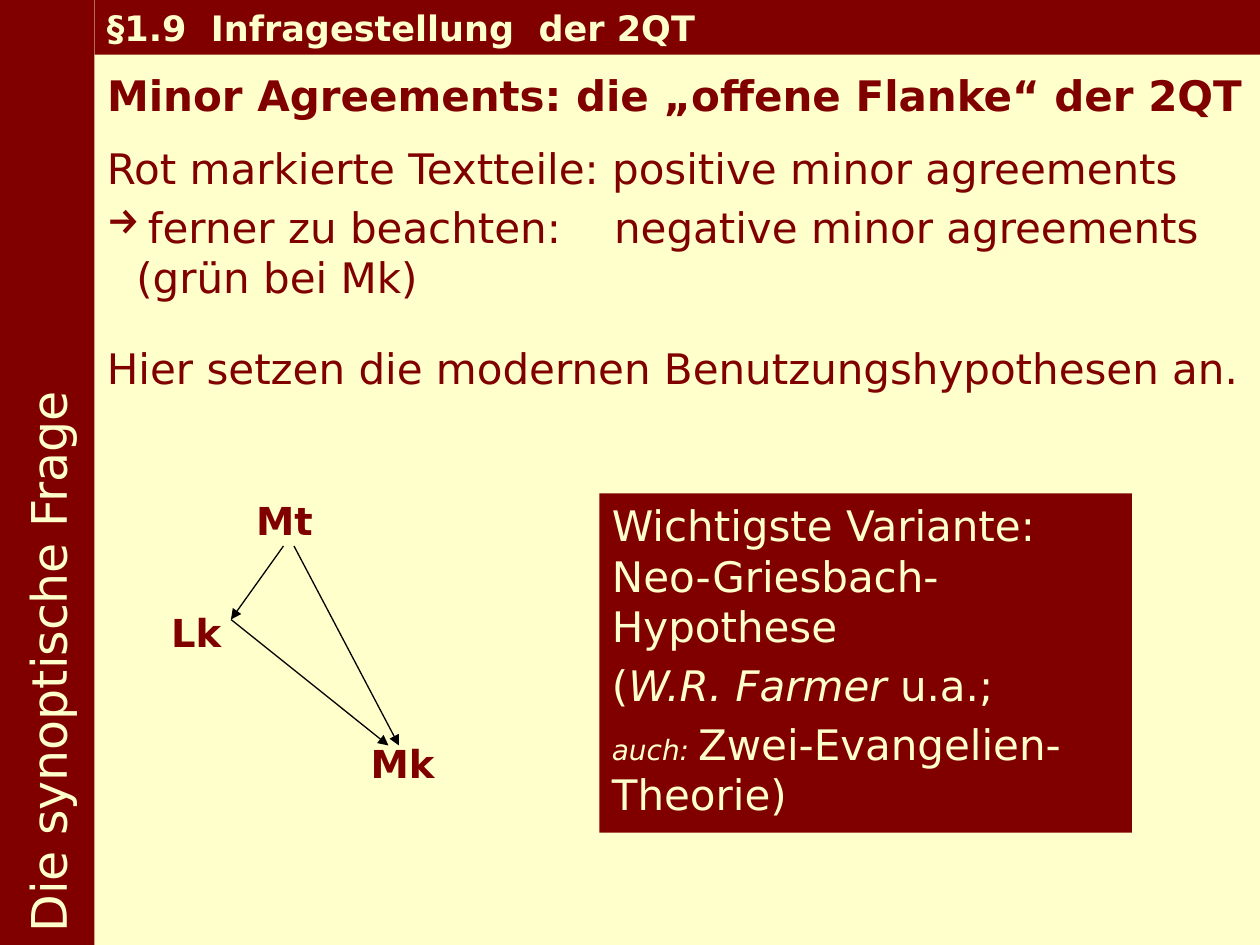
import pptx
import pptx.util
import pptx.dml.color
import pptx.enum.shapes
import pptx.enum.text
import pptx.oxml
import pptx.oxml.ns

MAROON, CREAM, BLACK = "800000", "FFFFCC", "000000"
FONT = "DejaVu Sans"
SPACE = pptx.util.Pt(4.8)

deck = pptx.Presentation()
deck.slide_width, deck.slide_height = pptx.util.Inches(10), pptx.util.Inches(7.5)
CELL = deck.slide_width / 120
page = deck.slides.add_slide(deck.slide_layouts[5])


def color(code):
    return pptx.dml.color.RGBColor.from_string(code)


def write(box, area, lines, size, ink, bold=False, fill=None, anchor="TOP"):
    box.left, box.top, box.width, box.height = [round(part * CELL) for part in area]
    if fill:
        box.shadow.inherit = False
        box.fill.solid()
        box.fill.fore_color.rgb = color(fill)
        box.line.fill.background()
    frame = box.text_frame
    frame.text = "\n".join(lines)
    frame.word_wrap = True
    frame.auto_size = pptx.enum.text.MSO_AUTO_SIZE.NONE
    frame.vertical_anchor = pptx.enum.text.MSO_ANCHOR[anchor]
    for para in frame.paragraphs:
        para.alignment = pptx.enum.text.PP_ALIGN.LEFT
        para.space_before = SPACE
        for span in para.runs:
            span.font.name, span.font.size, span.font.bold = FONT, pptx.util.Pt(size), bold
            span.font.color.rgb = color(ink)
    return frame


page.background.fill.solid()
page.background.fill.fore_color.rgb = color(CREAM)
shapes = page.shapes
RECTANGLE = pptx.enum.shapes.MSO_SHAPE.RECTANGLE

write(shapes.title, (9, 6, 111, 6), ["Minor Agreements: die „offene Flanke“ der 2QT"], 24, MAROON, bold=True)

body = write(shapes.add_textbox(0, 0, 0, 0), (9, 13, 111, 25), [
    "Rot markierte Textteile: positive minor agreements",
    "ferner zu beachten:\tnegative minor agreements",
    "(grün bei Mk)",
    "Hier setzen die modernen Benutzungshypothesen an.",
], 24, MAROON)
bulleted, indented, closing = body.paragraphs[1:]
indented.space_before = pptx.util.Pt(0)
closing.space_before = pptx.util.Pt(23)
namespace = pptx.oxml.ns.nsdecls("a")
arrow_props = bulleted._p.get_or_add_pPr()
arrow_props.set("marL", str(round(3.9 * CELL)))
arrow_props.set("indent", str(round(-3.9 * CELL)))
arrow_props.append(pptx.oxml.parse_xml(f'<a:buChar {namespace} char="→"/>'))
arrow_props.append(pptx.oxml.parse_xml(
    f'<a:tabLst {namespace}><a:tab pos="{round(48.3 * CELL)}" algn="l"/></a:tabLst>'))
indented._p.get_or_add_pPr().set("marL", str(round(2.8 * CELL)))

variant = write(shapes.add_shape(RECTANGLE, 0, 0, 0, 0), (57.1, 47, 50.7, 32.3), [
    "Wichtigste Variante: Neo-Griesbach-Hypothese", "(", "",
], 24, CREAM, fill=MAROON)
for para, text, size, italic in (
    (variant.paragraphs[1], "W.R. Farmer", 24, True),
    (variant.paragraphs[1], " u.a.;", 24, False),
    (variant.paragraphs[2], "auch: ", 16, True),
    (variant.paragraphs[2], "Zwei-Evangelien-Theorie)", 24, False),
):
    span = para.add_run()
    span.text = text
    span.font.name, span.font.size, span.font.italic = FONT, pptx.util.Pt(size), italic
    span.font.color.rgb = color(CREAM)

for gospel, left, middle in (("Mt", 24.4, 49.5), ("Lk", 16.3, 60.2), ("Mk", 35.3, 72.7)):
    frame = write(shapes.add_textbox(0, 0, 0, 0), (left, middle - 2.5, 8, 5), [gospel], 22, MAROON,
                  bold=True, anchor="MIDDLE")
    frame.margin_left = frame.margin_right = frame.margin_top = frame.margin_bottom = 0
    frame.paragraphs[0].space_before = pptx.util.Pt(0)

for ends in ((27, 52, 22, 59), (22, 59, 37, 71), (28, 52, 38, 71)):
    arrow = shapes.add_connector(pptx.enum.shapes.MSO_CONNECTOR.STRAIGHT, *[round(end * CELL) for end in ends])
    arrow.line.color.rgb = color(BLACK)
    arrow.line.width = pptx.util.Pt(0.75)
    arrow.line._get_or_add_ln().append(pptx.oxml.parse_xml(f'<a:tailEnd {namespace} type="triangle"/>'))
    arrow._element.spPr.append(pptx.oxml.parse_xml(f"<a:effectLst {namespace}/>"))

sidebar = write(shapes.add_shape(RECTANGLE, 0, 0, 0, 0), (0, 0, 9, 90), ["Die synoptische Frage"], 28, CREAM,
                fill=MAROON, anchor="MIDDLE")
sidebar._txBody.bodyPr.set("vert", "vert270")
sidebar.paragraphs[0].space_before = pptx.util.Pt(0)

write(shapes.add_shape(RECTANGLE, 0, 0, 0, 0), (9, 0, 111, 5.2), ["§1.9  Infragestellung  der 2QT"], 20, CREAM,
      bold=True, fill=MAROON)

deck.save("out.pptx")
